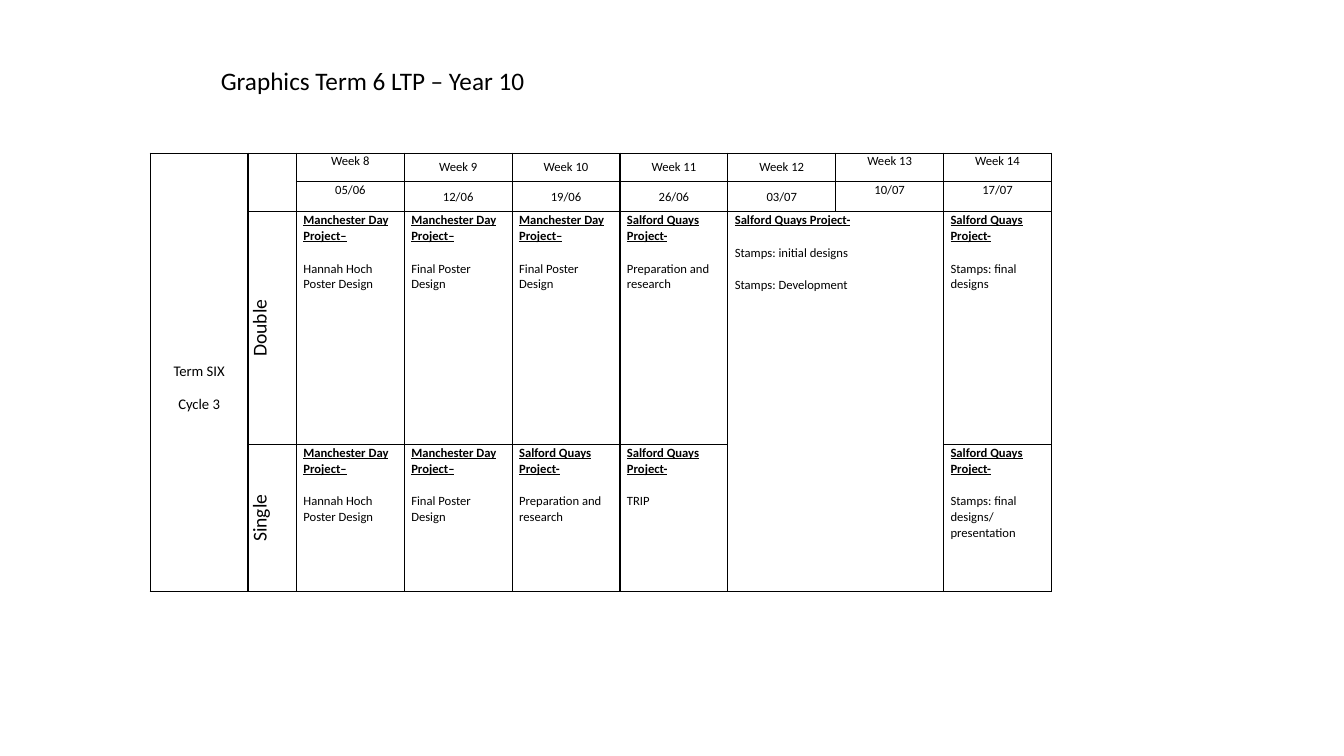
from lxml import etree
from pptx import Presentation
from pptx.dml.color import RGBColor
from pptx.enum.text import MSO_ANCHOR, MSO_AUTO_SIZE, PP_ALIGN
from pptx.util import Inches, Pt

LEFT, CENTER = PP_ALIGN.LEFT, PP_ALIGN.CENTER
TOP, MIDDLE = MSO_ANCHOR.TOP, MSO_ANCHOR.MIDDLE
FIT_SHAPE = MSO_AUTO_SIZE.SHAPE_TO_FIT_TEXT
BLACK = RGBColor(0, 0, 0)
WHITE = RGBColor(255, 255, 255)
FONT = "Calibri"
DRAWING = "http://schemas.openxmlformats.org/drawingml/2006/main"

TITLE = "Graphics Term 6 LTP – Year 10"
TERM = ["Term SIX", "Cycle 3"]
WEEKS = [
    ("Week 8", "05/06", TOP),
    ("Week 9", "12/06", MIDDLE),
    ("Week 10", "19/06", MIDDLE),
    ("Week 11", "26/06", MIDDLE),
    ("Week 12", "03/07", MIDDLE),
    ("Week 13", "10/07", TOP),
    ("Week 14", "17/07", TOP),
]
DAY = "Manchester Day Project–"
QUAYS = "Salford Quays Project-"
LESSONS = [
    ("Double", [
        (DAY, "Hannah Hoch Poster Design"),
        (DAY, "Final Poster Design"),
        (DAY, "Final Poster Design"),
        (QUAYS, "Preparation and research"),
        (QUAYS, "Stamps: initial designs", "Stamps: Development"),
        None,
        (QUAYS, "Stamps: final designs"),
    ]),
    ("Single", [
        (DAY, "Hannah Hoch Poster Design"),
        (DAY, "Final Poster Design"),
        (QUAYS, "Preparation and research"),
        (QUAYS, "TRIP"),
        None,
        None,
        (QUAYS, "Stamps: final designs/ presentation"),
    ]),
]
COLUMN_WIDTHS = [0.97, 0.48] + [1.07] * len(WEEKS)
ROW_HEIGHTS = [0.28, 0.28, 2.31, 1.46]
MERGES = [((0, 0), (3, 0)), ((0, 1), (1, 1)), ((2, 6), (3, 7))]


def add_span(para, text, size, heading=False):
    span = para.add_run()
    span.text = text
    font = span.font
    font.name, font.size, font.color.rgb = FONT, Pt(size), BLACK
    font.bold = font.underline = heading


def write_cell(cell, lines, size=9, align=LEFT, anchor=TOP, spaced=True, headed=False):
    cell.vertical_anchor = anchor
    frame = cell.text_frame
    for index, line in enumerate(lines):
        para = frame.add_paragraph() if index else frame.paragraphs[0]
        para.alignment = align
        if spaced:
            para.line_spacing = Pt(11.4)
            para.space_before = para.space_after = Pt(6)
        add_span(para, line, size, headed and index == 0)


def style_cell(cell):
    cell.margin_left = cell.margin_right = Inches(0.07)
    cell.margin_top = cell.margin_bottom = 0
    cell.fill.solid()
    cell.fill.fore_color.rgb = WHITE
    properties = cell._tc.get_or_add_tcPr()
    for index, side in enumerate(("lnL", "lnR", "lnT", "lnB")):
        border = etree.fromstring(
            f'<a:{side} xmlns:a="{DRAWING}" w="{Pt(1)}"><a:solidFill>'
            f'<a:srgbClr val="{BLACK}"/></a:solidFill></a:{side}>'
        )
        properties.insert(index, border)


def add_title(page):
    title = page.shapes.title
    title.left, title.top = Inches(2.09), Inches(0.6)
    title.width, title.height = Inches(3.25), Inches(0.4)
    frame = title.text_frame
    frame.word_wrap = False
    frame.auto_size = FIT_SHAPE
    frame.vertical_anchor = TOP
    para = frame.paragraphs[0]
    para.alignment = LEFT
    para.line_spacing = 1.0
    para.space_before = Pt(0)
    add_span(para, TITLE, 18)


def add_plan(page):
    table = page.shapes.add_table(
        len(ROW_HEIGHTS), len(COLUMN_WIDTHS), Inches(1.49), Inches(1.52),
        Inches(sum(COLUMN_WIDTHS)), Inches(sum(ROW_HEIGHTS)),
    ).table
    table.first_row = table.horz_banding = False
    for column, width in zip(table.columns, COLUMN_WIDTHS):
        column.width = Inches(width)
    for row, height in zip(table.rows, ROW_HEIGHTS):
        row.height = Inches(height)
    for cell in table.iter_cells():
        style_cell(cell)
    for first, last in MERGES:
        table.cell(*first).merge(table.cell(*last))

    term = table.cell(0, 0)
    write_cell(term, TERM, 10.5, CENTER, MIDDLE)
    term.margin_top = Inches(0.33)
    for column, (week, date, anchor) in enumerate(WEEKS, 2):
        for row, label in enumerate((week, date)):
            write_cell(table.cell(row, column), [label], align=CENTER, anchor=anchor)
    for row, (name, lessons) in enumerate(LESSONS, 2):
        label = table.cell(row, 1)
        write_cell(label, [name], 14, CENTER, MIDDLE, spaced=False)
        label._tc.get_or_add_tcPr().set("vert", "vert270")
        for column, lines in enumerate(lessons, 2):
            if lines:
                write_cell(table.cell(row, column), lines, headed=True)


def main():
    deck = Presentation()
    deck.slide_width, deck.slide_height = Inches(13.33), Inches(7.5)
    page = deck.slides.add_slide(deck.slide_layouts[5])
    add_title(page)
    add_plan(page)
    deck.save("out.pptx")


if __name__ == "__main__":
    main()
